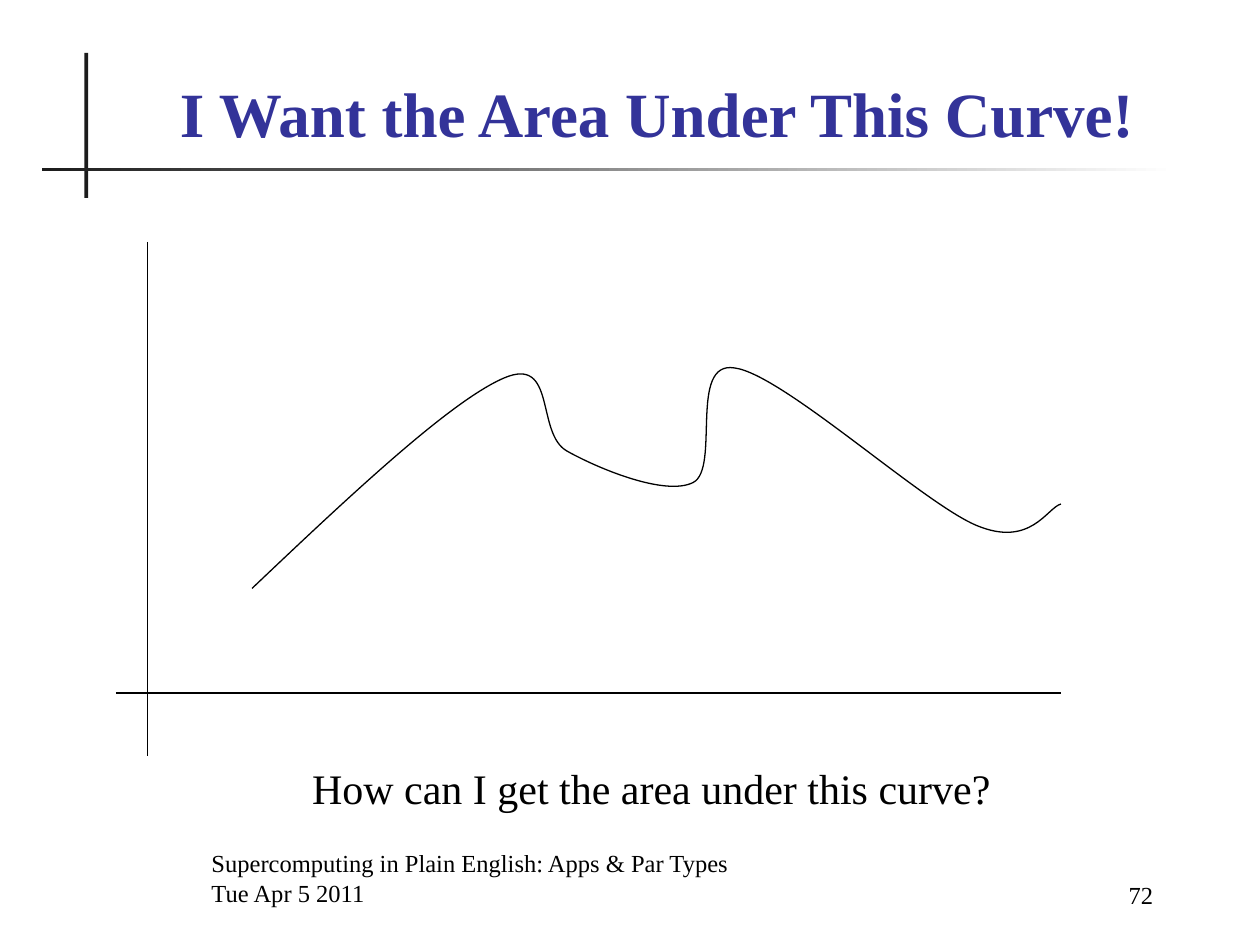
from dataclasses import dataclass

from lxml import etree
from pptx import Presentation
from pptx.dml.color import RGBColor
from pptx.enum import shapes, text
from pptx.oxml import ns
from pptx.util import Inches, Pt


@dataclass(frozen=True)
class Theme:
    font: str = "Times New Roman"
    ink: str = "000000"
    title: str = "333399"
    rule: str = "1C1C1C"
    paper: str = "FFFFFF"
    head: int = 36
    body: int = 24
    foot: int = 14
    thin: float = 0.75


THEME = Theme()
ALIGN = text.PP_ALIGN
ANCHOR = text.MSO_ANCHOR

# Start point, then two control points and an end point for each bend.
CURVE = [
    (2, 4.67),
    (2.79, 3.92), (3.58, 3.18), (4, 3),
    (4.42, 2.82), (4.25, 3.44), (4.5, 3.58),
    (4.75, 3.72), (5.28, 3.94), (5.5, 3.83),
    (5.72, 3.72), (5.46, 2.86), (5.83, 2.92),
    (6.21, 2.97), (7.32, 3.99), (7.75, 4.17),
    (8.18, 4.35), (8.31, 4.03), (8.42, 4),
]


def color(code):
    return RGBColor.from_string(code)


def add_text(slide, box, lines, size, align, anchor=ANCHOR.BOTTOM,
             ink=THEME.ink, bold=False):
    frame = slide.shapes.add_textbox(*map(Inches, box)).text_frame
    frame.word_wrap = True
    frame.vertical_anchor = anchor
    frame.text = "\n".join(lines)
    form = {"name": THEME.font, "size": Pt(size), "bold": bold}
    for para in frame.paragraphs:
        para.alignment = align
        for key, value in form.items():
            setattr(para.font, key, value)
        para.font.color.rgb = color(ink)


def add_bar(slide, box, fade=False):
    """Add a title rule, fading to the paper colour when asked."""
    bar = slide.shapes.add_shape(shapes.MSO_SHAPE.RECTANGLE, *map(Inches, box))
    bar.shadow.inherit = False
    bar.line.fill.background()
    if fade:
        bar.fill.gradient()
        bar.fill.gradient_angle = 0
        for stop, code in zip(bar.fill.gradient_stops, (THEME.rule, THEME.paper)):
            stop.color.rgb = color(code)
    else:
        bar.fill.solid()
        bar.fill.fore_color.rgb = color(THEME.rule)


def set_line(shape):
    shape.line.color.rgb = color(THEME.ink)
    shape.line.width = Pt(THEME.thin)


def add_axis(slide, start, end):
    axis = slide.shapes.add_connector(
        shapes.MSO_CONNECTOR.STRAIGHT, *map(Inches, start + end))
    set_line(axis)
    etree.SubElement(axis.element.spPr, ns.qn("a:effectLst"))


def add_curve(slide, points):
    """Outline the points, then merge each three segments into one Bezier."""
    first, *rest = [(Inches(x), Inches(y)) for x, y in points]
    pen = slide.shapes.build_freeform(*first)
    pen.add_line_segments(rest, close=False)
    curve = pen.convert_to_shape()
    curve.shadow.inherit = False
    curve.fill.background()
    set_line(curve)
    steps = list(curve.element.iter(ns.qn("a:lnTo")))
    for i in range(0, len(steps), 3):
        bend, *others = steps[i:i + 3]
        bend.tag = ns.qn("a:cubicBezTo")
        for step in others:
            bend.append(step[0])
            step.getparent().remove(step)


def main():
    deck = Presentation()
    deck.slide_width, deck.slide_height = Inches(10), Inches(7.5)
    slide = deck.slides.add_slide(deck.slide_layouts[6])

    add_bar(slide, (0.67, 0.42, 0.03, 1.15))
    add_bar(slide, (0.33, 1.33, 9, 0.03), fade=True)
    add_text(slide, (0.83, 0.5, 8.77, 0.74),
             ["I Want the Area Under This Curve!"],
             THEME.head, ALIGN.CENTER, ink=THEME.title, bold=True)

    add_axis(slide, (1.17, 1.92), (1.17, 6))
    add_axis(slide, (0.92, 5.5), (8.42, 5.5))
    add_curve(slide, CURVE)
    add_text(slide, (0.92, 6, 8.5, 0.5),
             ["How can I get the area under this curve?"],
             THEME.body, ALIGN.CENTER, ANCHOR.TOP)

    add_text(slide, (1.58, 6.75, 6.08, 0.5),
             ["Supercomputing in Plain English: Apps & Par Types",
              "Tue Apr 5 2011"], THEME.foot, ALIGN.LEFT)
    add_text(slide, (7.83, 6.77, 1.42, 0.5), ["72"], THEME.foot, ALIGN.RIGHT)

    deck.save("out.pptx")


if __name__ == "__main__":
    main()
